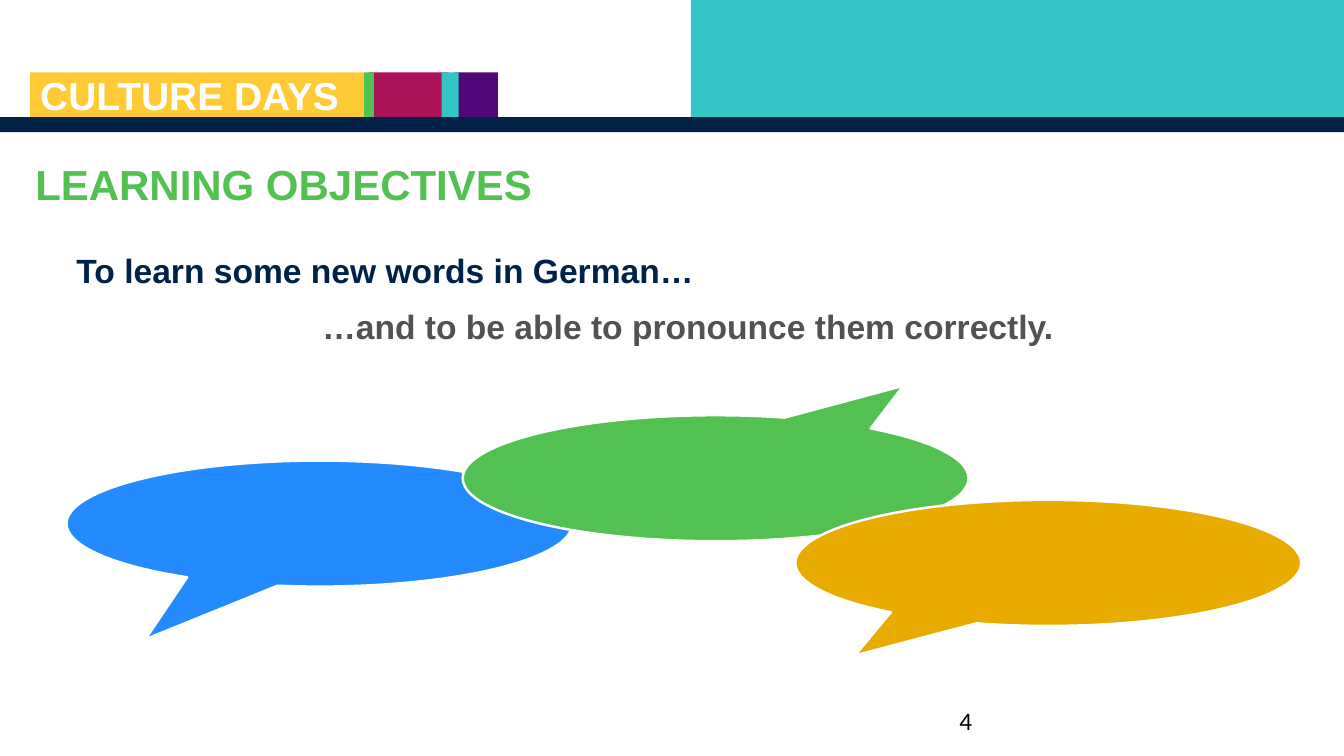
"""Build the Culture Days slide that sets out the German learning objectives."""
from dataclasses import dataclass

from pptx import Presentation
from pptx.dml.color import RGBColor
from pptx.enum.shapes import MSO_SHAPE
from pptx.enum.text import MSO_ANCHOR, PP_ALIGN
from pptx.shapes.autoshape import Shape
from pptx.slide import Slide
from pptx.util import Pt

RECTANGLE = MSO_SHAPE.RECTANGLE
SPEECH_BUBBLE = MSO_SHAPE.OVAL_CALLOUT
TOP = MSO_ANCHOR.TOP
LEFT = PP_ALIGN.LEFT

COLOURS = {
    "teal": "34C6C6",
    "navy band": "032248",
    "navy text": "002248",
    "purple": "500778",
    "crimson": "AC145A",
    "green": "52C152",
    "yellow": "FFCA36",
    "blue": "248BFF",
    "amber": "E8AB00",
    "grey": "525252",
    "white": "FFFFFF",
    "black": "000000",
}
SLIDE_WIDTH, SLIDE_HEIGHT = 960, 540
BAND_TOP, BAND_HEIGHT = 83.6, 10.8
STRIP_TOP = 51.8
STRIP_HEIGHT = BAND_TOP - STRIP_TOP
BUBBLE_WIDTH, BUBBLE_HEIGHT = 361.4, 90


@dataclass(frozen=True)
class Block:
    """A plain rectangle of the header."""
    left: float
    top: float
    width: float
    height: float
    colour: str


@dataclass(frozen=True)
class Bubble:
    """A speech bubble with its tail given relative to its centre."""
    left: float
    top: float
    tail_x: float
    tail_y: float
    colour: str


@dataclass(frozen=True)
class Label:
    """A line of text in its own box."""
    text: str
    left: float
    top: float
    width: float
    height: float
    size: float
    colour: str
    bold: bool = True
    font: str = "Arial"
    line_spacing: float = 1.0


HEADER_BLOCKS = (
    Block(493.6, 0, SLIDE_WIDTH - 493.6, BAND_TOP, "teal"),
    Block(0, BAND_TOP, SLIDE_WIDTH, BAND_HEIGHT, "navy band"),
    Block(324.7, STRIP_TOP, 31, STRIP_HEIGHT, "purple"),
    Block(263.5, STRIP_TOP, 56.9, STRIP_HEIGHT, "crimson"),
    Block(315.4, STRIP_TOP, 12.2, STRIP_HEIGHT, "teal"),
    Block(259.9, STRIP_TOP, 7.2, STRIP_HEIGHT, "green"),
    Block(21.6, STRIP_TOP, 238.3, STRIP_HEIGHT, "yellow"),
)
TITLE = Label("LEARNING OBJECTIVES", 25.2, 113, 666.7, 48.2, 30, "green")
LABELS = (
    Label("CULTURE DAYS", 21.6, 54, 298.8, 34.6, 27.8, "white", line_spacing=0.8),
    Label("To learn some new words in German…", 47.5, 175, 612.7, 71.3, 24, "navy text"),
    Label("…and to be able to pronounce them correctly.", 223.2, 214.6, 689, 142.6, 24, "grey"),
    Label("4", 678.2, 500.4, 216, 28.8, 18, "black", bold=False, font="Calibri"),
)
BUBBLES = (
    Bubble(47.5, 329, -0.344, 0.918, "blue"),
    Bubble(330.5, 296.6, 0.371, -0.734, "green"),
    Bubble(568.1, 357.1, -0.382, 0.734, "amber"),
)


def colour_of(name: str) -> RGBColor:
    """Return the named colour."""
    return RGBColor.from_string(COLOURS[name])


def fill_plain(shape: Shape, colour: str) -> None:
    """Give a shape a solid fill without a shadow."""
    shape.shadow.inherit = False
    shape.fill.solid()
    shape.fill.fore_color.rgb = colour_of(colour)


def draw_block(slide: Slide, block: Block) -> None:
    """Draw one header rectangle."""
    shape = slide.shapes.add_shape(
        RECTANGLE, Pt(block.left), Pt(block.top), Pt(block.width), Pt(block.height))
    fill_plain(shape, block.colour)
    shape.line.fill.background()


def draw_bubble(slide: Slide, bubble: Bubble) -> None:
    """Draw one speech bubble with a white outline."""
    shape = slide.shapes.add_shape(
        SPEECH_BUBBLE, Pt(bubble.left), Pt(bubble.top), Pt(BUBBLE_WIDTH), Pt(BUBBLE_HEIGHT))
    shape.adjustments[0] = bubble.tail_x
    shape.adjustments[1] = bubble.tail_y
    fill_plain(shape, bubble.colour)
    shape.line.color.rgb = colour_of("white")
    shape.line.width = Pt(1.75)


def write_label(shape: Shape, label: Label) -> None:
    """Place a text shape, then set and format its text."""
    shape.left, shape.top = Pt(label.left), Pt(label.top)
    shape.width, shape.height = Pt(label.width), Pt(label.height)
    text_frame = shape.text_frame
    text_frame.text = label.text
    text_frame.word_wrap = True
    text_frame.vertical_anchor = TOP
    paragraph = text_frame.paragraphs[0]
    paragraph.alignment = LEFT
    paragraph.line_spacing = label.line_spacing
    font = paragraph.runs[0].font
    font.name = label.font
    font.size = Pt(label.size)
    font.bold = label.bold
    font.color.rgb = colour_of(label.colour)


def write_title(slide: Slide) -> None:
    """Fill the title placeholder, flush with the edges of its box."""
    title = slide.shapes.title
    write_label(title, TITLE)
    text_frame = title.text_frame
    text_frame.margin_left = text_frame.margin_right = Pt(0)
    text_frame.margin_top = text_frame.margin_bottom = Pt(0)


def main() -> None:
    """Build and save the presentation."""
    presentation = Presentation()
    presentation.slide_width = Pt(SLIDE_WIDTH)
    presentation.slide_height = Pt(SLIDE_HEIGHT)
    title_only = presentation.slide_layouts.get_by_name("Title Only")
    slide = presentation.slides.add_slide(title_only)
    write_title(slide)
    for block in HEADER_BLOCKS:
        draw_block(slide, block)
    for label in LABELS:
        write_label(slide.shapes.add_textbox(Pt(0), Pt(0), Pt(0), Pt(0)), label)
    for bubble in BUBBLES:
        draw_bubble(slide, bubble)
    presentation.save("out.pptx")


if __name__ == "__main__":
    main()
